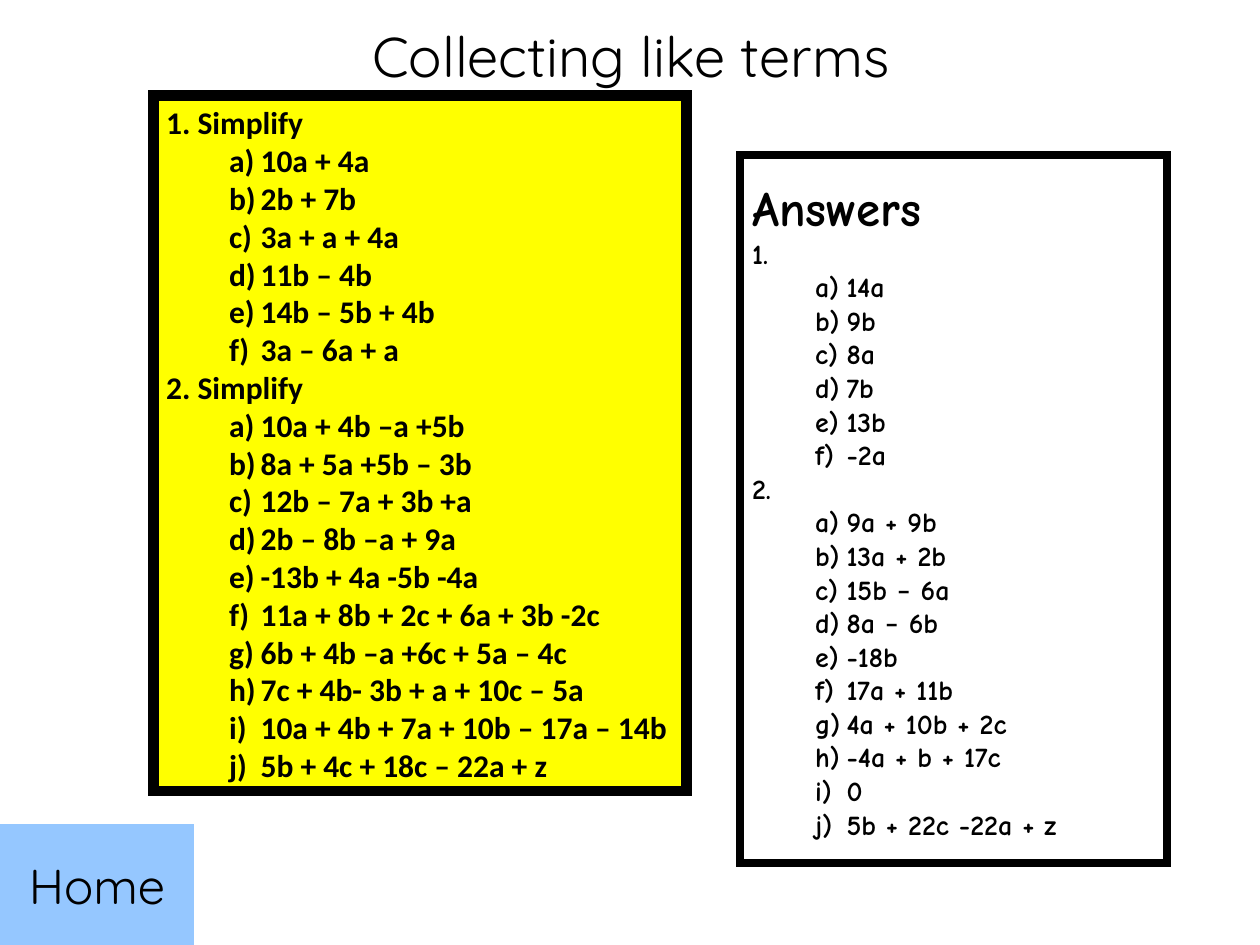
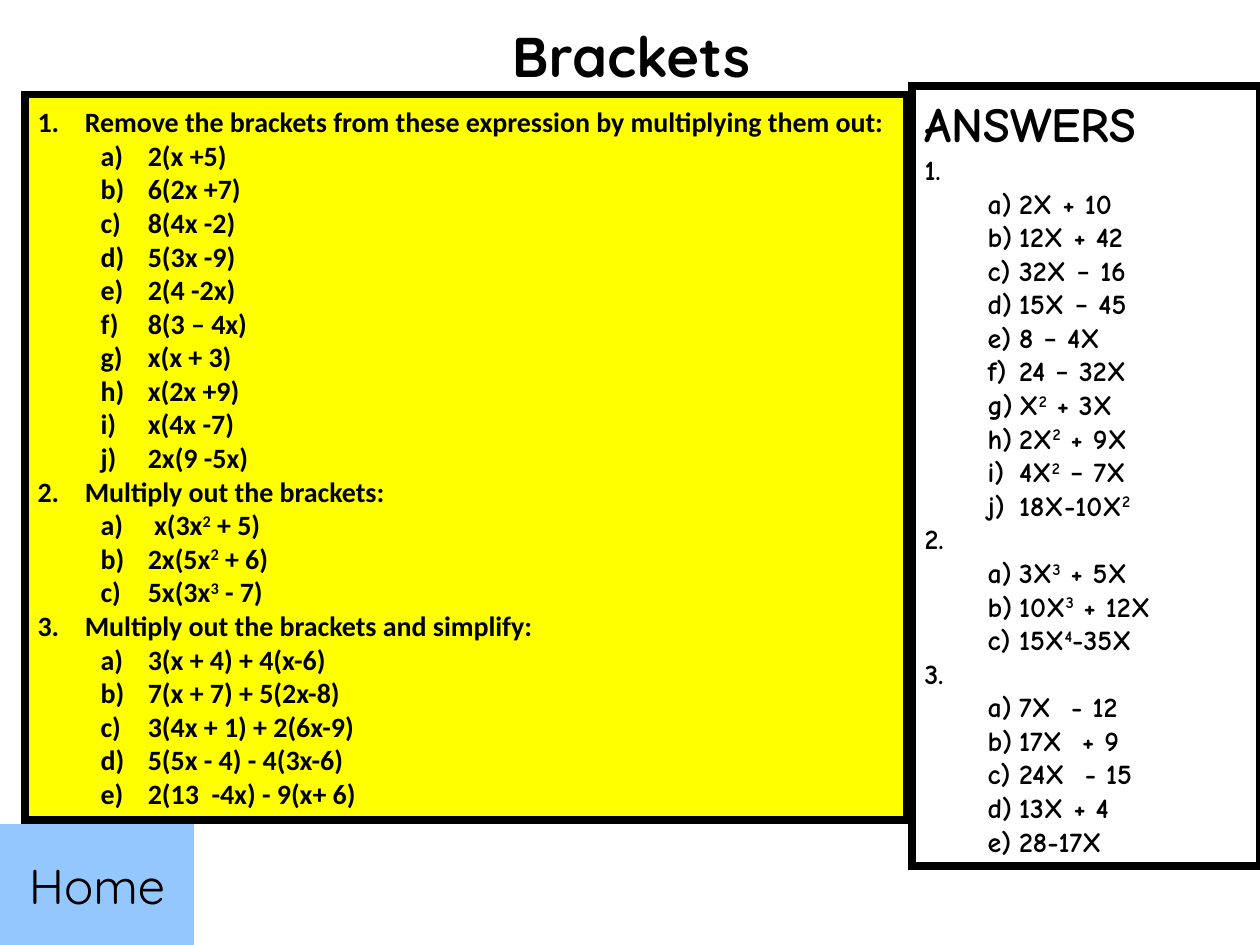
from itertools import groupby

from lxml import etree
from pptx import Presentation
from pptx import util as u
from pptx.dml.color import RGBColor
from pptx.enum import shapes, text
from pptx.oxml.ns import qn

THEME = {
    "ink": RGBColor(0, 0, 0),
    "paper": RGBColor(255, 255, 255),
    "question": RGBColor(255, 255, 0),
    "home": RGBColor(0x95, 0xC7, 0xFF),
    "display": "Quicksand",
    "body": "Calibri",
    "hand": "Comic Neue",
    "title": 32,
    "heading": 28,
    "list": 16,
    "big_list": 18,
}
SUPERSCRIPTS = "²³⁴"
TO_DIGITS = str.maketrans(SUPERSCRIPTS, "234")

# Every list is made of (numbered heading, lettered items) parts.
SLIDES = [
    {
        "title": "Collecting like terms", "bold": False,
        "questions": {
            "box": (1.22, 0.76, 4.23, 5.52), "line": 6,
            "size": THEME["big_list"], "hang": 0.25,
            "parts": [
                ("Simplify", ["10a + 4a", "2b + 7b", "3a + a + 4a", "11b – 4b",
                              "14b – 5b + 4b", "3a – 6a + a"]),
                ("Simplify", ["10a + 4b –a +5b", "8a + 5a +5b – 3b",
                              "12b – 7a + 3b +a", "2b – 8b –a + 9a",
                              "-13b + 4a -5b -4a", "11a + 8b + 2c + 6a + 3b -2c",
                              "6b + 4b –a +6c + 5a – 4c",
                              "7c + 4b- 3b + a + 10c – 5a",
                              "10a + 4b + 7a + 10b – 17a – 14b",
                              "5b + 4c + 18c – 22a + z"]),
            ],
        },
        "answers": {
            "box": (5.87, 1.23, 3.39, 5.62), "heading": "Answers",
            "parts": [
                (" ", ["14a", "9b", "8a", "7b", "13b", "-2a"]),
                (" ", ["9a + 9b", "13a + 2b", "15b – 6a", "8a – 6b", "-18b",
                       "17a + 11b", "4a + 10b + 2c", "-4a + b + 17c", "0",
                       "5b + 22c -22a + z"]),
            ],
        },
    },
    {
        "title": "Brackets", "bold": True,
        "questions": {
            "box": (0.2, 0.75, 7, 5.76), "line": 4.5,
            "size": THEME["list"], "hang": 0.375,
            "parts": [
                ("Remove the brackets from these expression by multiplying them out:",
                 ["2(x +5)", "6(2x +7)", "8(4x -2)", "5(3x -9)", "2(4 -2x)",
                  "8(3 – 4x)", "x(x + 3)", "x(2x +9)", "x(4x -7)", "2x(9 -5x)"]),
                ("Multiply out the brackets:",
                 [" x(3x² + 5)", "2x(5x² + 6)", "5x(3x³ - 7)"]),
                ("Multiply out the brackets and simplify:",
                 ["3(x + 4) + 4(x-6)", "7(x + 7) + 5(2x-8)",
                  "3(4x + 1) + 2(6x-9)", "5(5x - 4) - 4(3x-6)",
                  "2(13  -4x) - 9(x+ 6)"]),
            ],
        },
        "answers": {
            "box": (7.24, 0.68, 2.76, 6.19), "heading": "ANSWERS",
            "parts": [
                (" ", ["2X + 10", "12X + 42", "32X – 16", "15X – 45", "8 – 4X",
                       "24 – 32X", "X² + 3X", "2X² + 9X", "4X² – 7X",
                       "18X-10X²"]),
                (" ", ["3X³ + 5X", "10X³ + 12X", "15X⁴-35X"]),
                (" ", ["7X  - 12", "17X  + 9", "24X  - 15", "13X + 4",
                       "28-17X"]),
            ],
        },
    },
]


def add_box(s, box, fill=None, line=None):
    """Add a rectangle; without a line width it has no outline."""
    sp = s.shapes.add_shape(shapes.MSO_SHAPE.RECTANGLE, *map(u.Inches, box))
    sp.shadow.inherit = False
    if fill is None:
        sp.fill.background()
    else:
        sp.fill.solid()
        sp.fill.fore_color.rgb = fill
    if line is None:
        sp.line.fill.background()
    else:
        sp.line.color.rgb = THEME["ink"]
        sp.line.width = u.Pt(line)
        ln = sp._element.spPr.find(qn("a:ln"))
        etree.SubElement(ln, qn("a:miter"), lim="800000")
    sp.text_frame.vertical_anchor = text.MSO_ANCHOR.MIDDLE
    return sp.text_frame


def write(p, words, font, size, bold, hang=None, level=0, number=None):
    """Fill a paragraph, raising exponents and setting dashes in the body font."""
    p.alignment = text.PP_ALIGN.CENTER if hang is None else text.PP_ALIGN.LEFT
    if hang is not None:
        p.level = level
        pPr = p._p.get_or_add_pPr()
        pPr.set("marL", str(u.Inches(hang + 0.5 * level)))
        pPr.set("indent", str(-u.Inches(hang)))
        if number:
            etree.SubElement(pPr, qn("a:buFont"), typeface="+mj-lt")
            etree.SubElement(pPr, qn("a:buAutoNum"), type=number)
    for (raised, dash), chars in groupby(
            words, key=lambda c: (c in SUPERSCRIPTS, c == "–")):
        r = p.add_run()
        r.text = "".join(chars).translate(TO_DIGITS)
        r.font.name = THEME["body"] if dash else font
        r.font.size = u.Pt(size)
        r.font.bold = bold
        r.font.color.rgb = THEME["ink"]
        if raised:
            r.font._element.set("baseline", "30000")


prs = Presentation()
prs.slide_width, prs.slide_height = u.Inches(10), u.Inches(7.5)

for content in SLIDES:
    s = prs.slides.add_slide(prs.slide_layouts[6])

    tf = add_box(s, (0.51, -0.19, 9, 1.25))
    write(tf.paragraphs[0], content["title"], THEME["display"], THEME["title"],
          content["bold"])
    tf = add_box(s, (0, 6.54, 1.54, 0.96), THEME["home"])
    write(tf.paragraphs[0], "Home", THEME["display"], THEME["heading"], False)

    questions, answers = content["questions"], content["answers"]
    question_tf = add_box(s, questions["box"], THEME["question"], questions["line"])
    question_tf.word_wrap = False
    answer_tf = add_box(s, answers["box"], THEME["paper"], 4.5)
    answer_tf.word_wrap = True
    write(answer_tf.paragraphs[0], answers["heading"], THEME["hand"],
          THEME["heading"], True, hang=0.375)

    for tf, parts, font, size, hang in (
            (question_tf, questions["parts"], THEME["body"], questions["size"],
             questions["hang"]),
            (answer_tf, answers["parts"], THEME["hand"], THEME["list"], 0.25)):
        tf.auto_size = text.MSO_AUTO_SIZE.SHAPE_TO_FIT_TEXT
        for heading, items in parts:
            p = tf.paragraphs[-1]
            if p.runs:
                p = tf.add_paragraph()
            write(p, heading, font, size, True, hang, 0, "arabicPeriod")
            for item in items:
                write(tf.add_paragraph(), item, font, size, True, hang, 1,
                      "alphaLcParenR")

prs.save("out.pptx")
